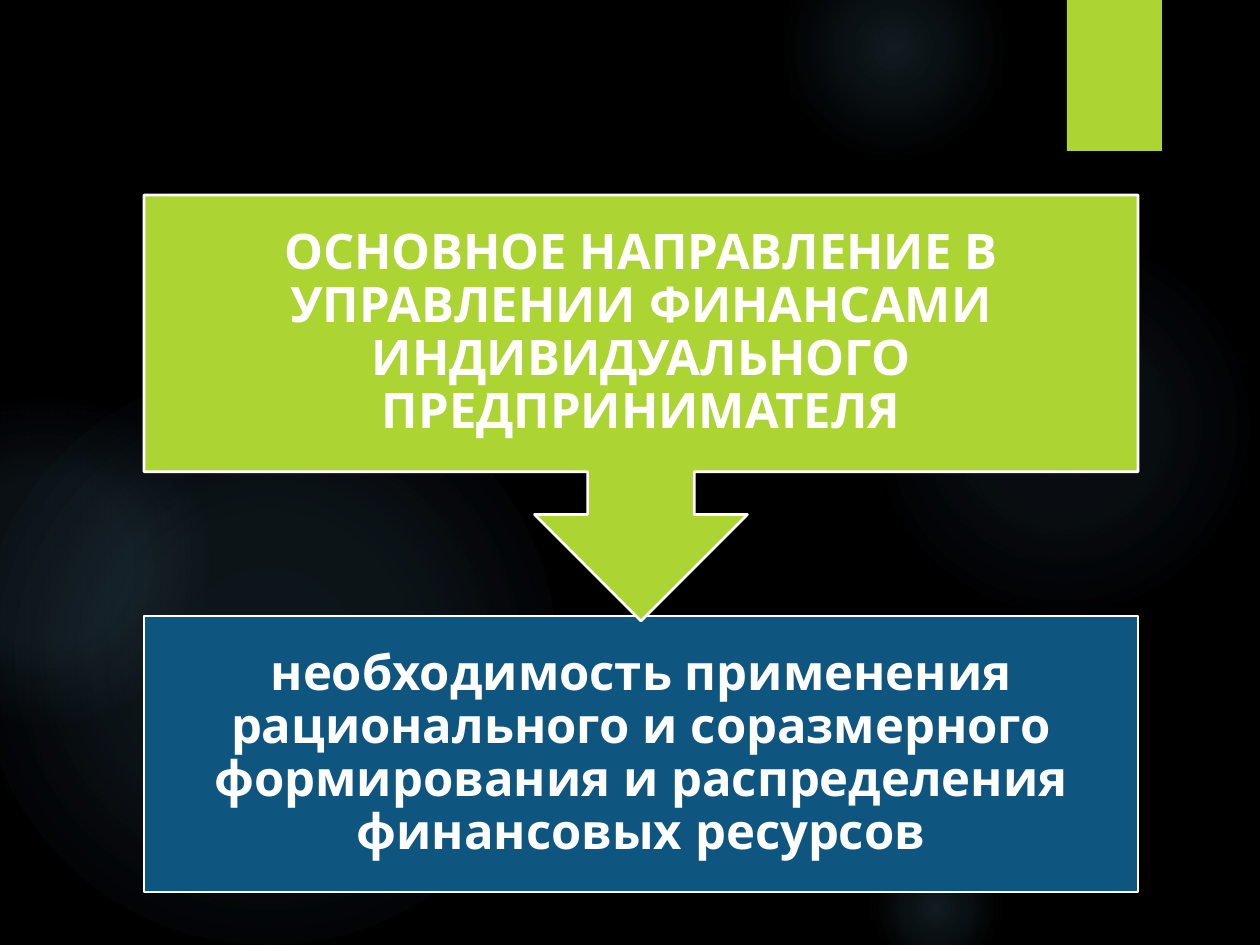
"""Build a slide with a heading callout that points down to its conclusion."""
from lxml.etree import fromstring
from pptx import Presentation
from pptx.dml.color import RGBColor as RGB
from pptx.enum.shapes import MSO_SHAPE as Kind
from pptx.enum.text import MSO_ANCHOR as Anchor, PP_ALIGN as Align
from pptx.oxml.ns import nsdecls
from pptx.util import Pt

PX = 914400 / 126
HUES = {"back": "000000", "glow": "7AC4F0", "lime": "ACD433",
        "blue": "0E5580", "white": "FFFFFF"}


def add_shape(kind, *box, fill=None, line=None):
    shape = slide.shapes.add_shape(kind, *[round(n * PX) for n in box])
    shape.shadow.inherit = False
    shape.fill.background()
    if fill:
        shape.fill.solid()
        shape.fill.fore_color.rgb = RGB.from_string(HUES[fill])
    shape.line.fill.background()
    if line:
        shape.line.color.rgb = RGB.from_string(HUES[line])
        shape.line.width = Pt(1.5)
    return shape


def set_text(shape, text, size=28, font="League Spartan", hue="white", pad=28):
    frame = shape.text_frame
    frame.word_wrap = True
    frame.vertical_anchor = Anchor.MIDDLE
    frame.margin_left = frame.margin_right = round(pad * PX)
    frame.margin_top = frame.margin_bottom = round(pad * PX)
    para = frame.paragraphs[0]
    para.alignment = Align.CENTER
    para.line_spacing = 0.9
    run = para.add_run()
    run.text = text
    run.font.size = Pt(size)
    run.font.name = font
    run.font.bold = True
    run.font.color.rgb = RGB.from_string(HUES[hue])


deck = Presentation()
deck.slide_width, deck.slide_height = round(1260 * PX), round(945 * PX)
slide = deck.slides.add_slide(deck.slide_layouts[6])
slide.background.fill.solid()
slide.background.fill.fore_color.rgb = RGB.from_string(HUES["back"])

glows = [
    (868, 231, 388, [(0, 7), (36, 6), (69, 0)]),
    (784, -63, 220, [(0, 14), (36, 7), (73, 0)]),
    (868, 840, 136, [(0, 14), (36, 7), (66, 0)]),
    (-21, 368, 577, [(0, 11), (36, 10), (75, 0)]),
    (-116, 399, 325, [(0, 8), (36, 8), (72, 0)]),
]
for left, top, size, stops in glows:
    glow = add_shape(Kind.OVAL, left, top, size, size)
    marks = "".join(
        f'<a:gs pos="{pos * 1000}"><a:srgbClr val="{HUES["glow"]}">'
        f'<a:alpha val="{alpha * 1000}"/></a:srgbClr></a:gs>'
        for pos, alpha in stops)
    grad = fromstring(
        f'<a:gradFill {nsdecls("a")}><a:gsLst>{marks}</a:gsLst>'
        '<a:path path="circle"><a:fillToRect l="50000" t="50000" '
        'r="50000" b="50000"/></a:path></a:gradFill>')
    props = glow.element.spPr
    props.replace(props.find("{*}noFill"), grad)

add_shape(Kind.RECTANGLE, 1067, 0, 95, 151, fill="lime")

blocks = [
    (Kind.RECTANGLE, 616, 276, "blue",
     "необходимость применения рационального и соразмерного "
     "формирования и распределения финансовых ресурсов"),
    (Kind.DOWN_ARROW_CALLOUT, 195, 426, "lime",
     "ОСНОВНОЕ НАПРАВЛЕНИЕ В УПРАВЛЕНИИ ФИНАНСАМИ "
     "ИНДИВИДУАЛЬНОГО ПРЕДПРИНИМАТЕЛЯ"),
]
for kind, top, high, fill, text in blocks:
    block = add_shape(kind, 144, top, 994, high, fill=fill, line="white")
    set_text(block, text)

deck.save("out.pptx")
